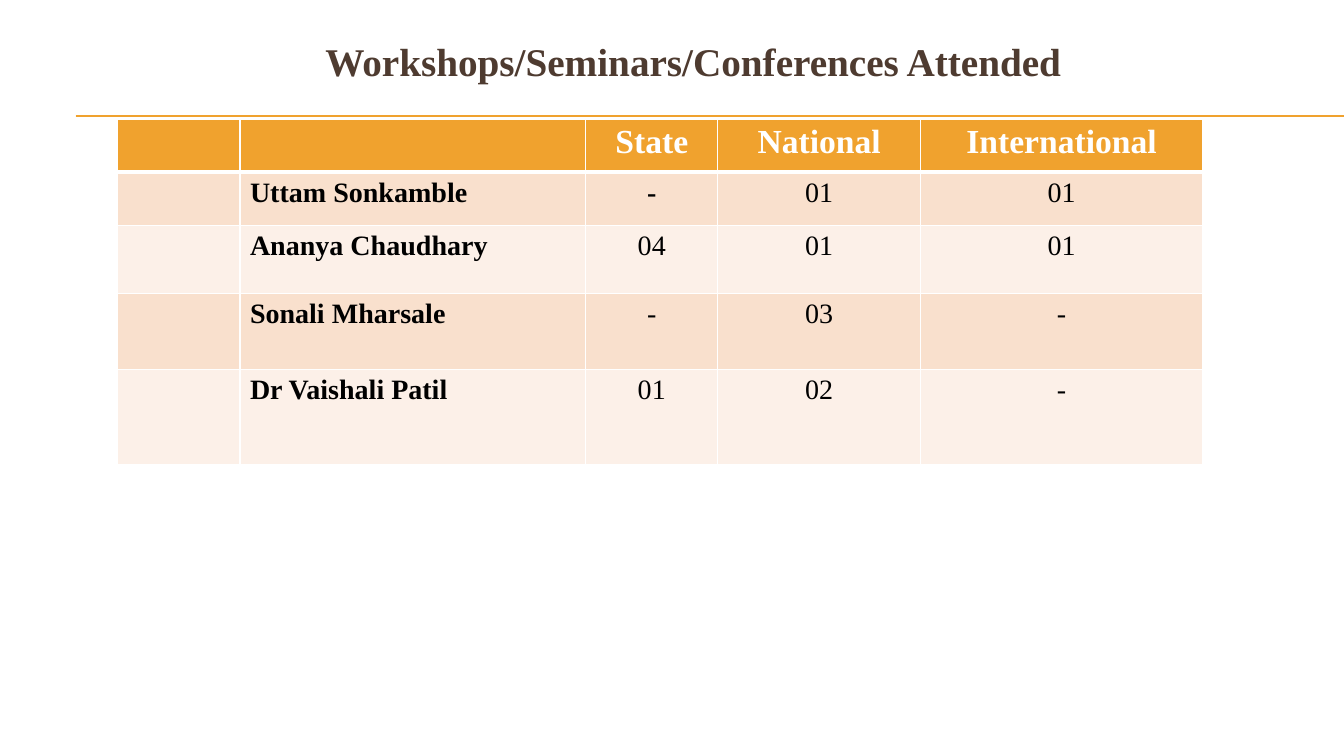
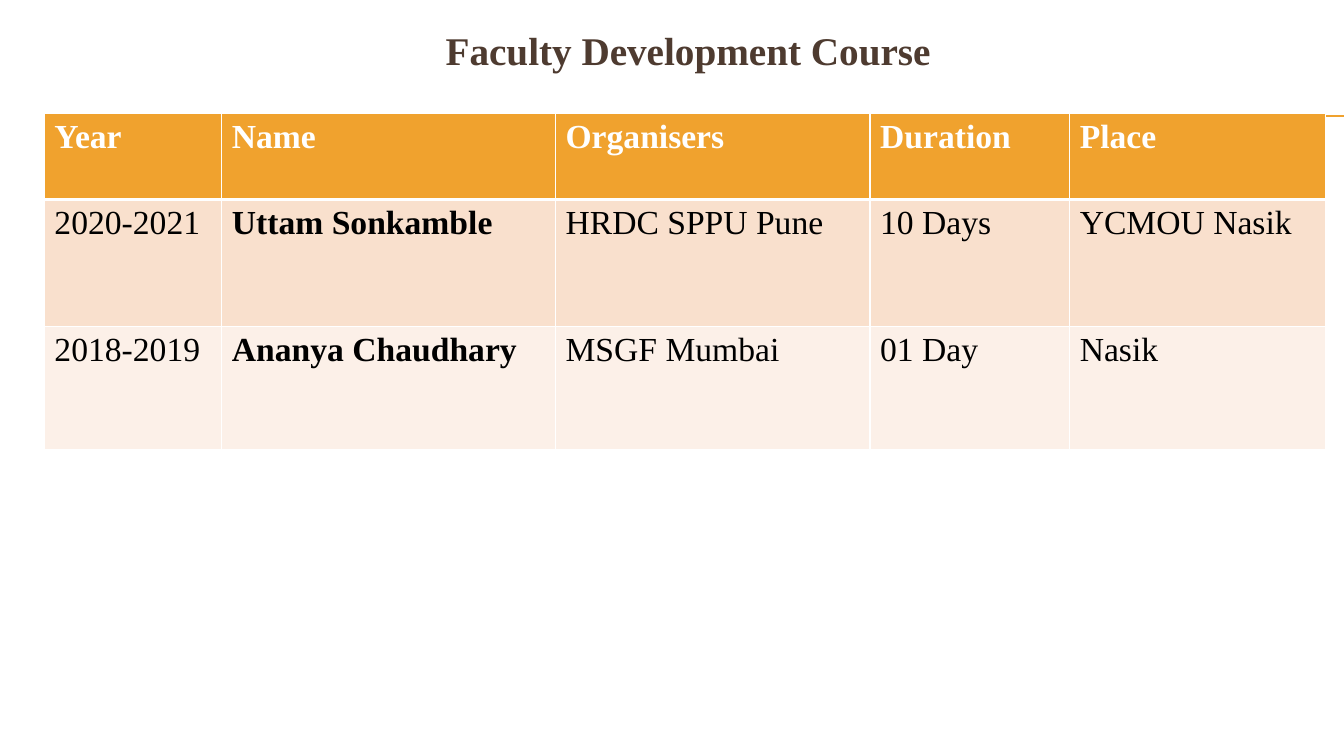
"""Build two slides listing faculty workshops and development courses."""
from lxml import etree
from pptx import Presentation
from pptx.dml.color import RGBColor
from pptx.enum.shapes import MSO_CONNECTOR
from pptx.enum.text import MSO_ANCHOR, PP_ALIGN
from pptx.oxml.ns import qn
from pptx.util import Inches, Pt

CENTER, LEFT = PP_ALIGN.CENTER, PP_ALIGN.LEFT
MIDDLE = MSO_ANCHOR.MIDDLE
STRAIGHT = MSO_CONNECTOR.STRAIGHT

ORANGE = RGBColor(0xF0, 0xA2, 0x2E)
BROWN = RGBColor(0x4E, 0x3B, 0x30)
WHITE = RGBColor(0xFF, 0xFF, 0xFF)
BLACK = RGBColor(0x00, 0x00, 0x00)
BANDS = (RGBColor(0xF9, 0xE0, 0xCD), RGBColor(0xFC, 0xF0, 0xE8))
FONT = "Times New Roman"
SLIDE_WIDTH, SLIDE_HEIGHT = 13.33, 7.5
RULE_LEFT, RULE_TOPS = 0.75, (1.15, 1.16)
TITLE_SIZE, HEADER_SIZE = 28, 24
NAME_COLUMN = 1

SLIDES = [
    {
        "title": "Workshops/Seminars/Conferences Attended",
        "title_box": (0.54, 0.24, 12.67, 0.73),
        "table_at": (1.16, 1.18),
        "columns": (1.22, 3.43, 1.31, 2.01, 2.8),
        "heights": (0.53, 0.53, 0.67, 0.76, 0.94),
        "alignments": (LEFT, LEFT, CENTER, CENTER, CENTER),
        "body_size": 20,
        "extra_bold": {(1, 2)},
        "rows": [
            ("", "", "State", "National", "International"),
            ("", "Uttam Sonkamble", "-", "01", "01"),
            ("", "Ananya Chaudhary", "04", "01", "01"),
            ("", "Sonali Mharsale", "-", "03", "-"),
            ("", "Dr Vaishali Patil", "01", "02", "-"),
        ],
    },
    {
        "title": "Faculty Development Course",
        "title_box": (0.49, 0.1, 12.67, 0.78),
        "table_at": (0.44, 1.13),
        "columns": (1.76, 3.31, 3.12, 1.98, 2.54),
        "heights": (0.85, 1.26, 1.22),
        "alignments": (LEFT,) * 5,
        "body_size": 24,
        "extra_bold": set(),
        "rows": [
            ("Year", "Name", "Organisers", "Duration", "Place"),
            ("2020-2021", "Uttam Sonkamble", "HRDC SPPU Pune", "10 Days", "YCMOU Nasik"),
            ("2018-2019", "Ananya Chaudhary", "MSGF Mumbai", "01 Day", "Nasik"),
        ],
    },
]


def write(frame, text, size, color, bold, alignment):
    paragraph = frame.paragraphs[0]
    paragraph.alignment = alignment
    run = paragraph.add_run()
    run.text = text
    run.font.name = FONT
    run.font.size = Pt(size)
    run.font.bold = bold
    run.font.color.rgb = color


def add_rules(slide):
    for top in RULE_TOPS:
        rule = slide.shapes.add_connector(
            STRAIGHT, Inches(RULE_LEFT), Inches(top), Inches(SLIDE_WIDTH), Inches(top))
        rule.line.color.rgb = ORANGE
        rule.line.width = Pt(0.75)
        etree.SubElement(rule._element.spPr, qn("a:effectLst"))


def add_title(slide, text, box):
    frame = slide.shapes.add_textbox(*map(Inches, box)).text_frame
    frame.word_wrap = True
    frame.vertical_anchor = MIDDLE
    write(frame, text, TITLE_SIZE, BROWN, True, CENTER)


def set_borders(cell, row):
    widths = {"L": 1, "R": 1, "T": 3 if row == 1 else 1, "B": 3 if row == 0 else 1}
    properties = cell._tc.get_or_add_tcPr()
    for side, width in widths.items():
        line = etree.SubElement(properties, qn(f"a:ln{side}"), w=str(Pt(width)))
        fill = etree.SubElement(line, qn("a:solidFill"))
        etree.SubElement(fill, qn("a:srgbClr"), val=str(WHITE))


def add_grid(slide, content):
    rows, columns, heights = content["rows"], content["columns"], content["heights"]
    box = (*content["table_at"], sum(columns), sum(heights))
    table = slide.shapes.add_table(len(rows), len(columns), *map(Inches, box)).table
    for column, width in zip(table.columns, columns):
        column.width = Inches(width)
    for row, height in zip(table.rows, heights):
        row.height = Inches(height)
    for r, values in enumerate(rows):
        header = r == 0
        size = HEADER_SIZE if header else content["body_size"]
        for c, text in enumerate(values):
            cell = table.cell(r, c)
            set_borders(cell, r)
            cell.fill.solid()
            cell.fill.fore_color.rgb = ORANGE if header else BANDS[(r - 1) % 2]
            bold = header or c == NAME_COLUMN or (r, c) in content["extra_bold"]
            if text:
                write(cell.text_frame, text, size, WHITE if header else BLACK,
                      bold, content["alignments"][c])


def main():
    presentation = Presentation()
    presentation.slide_width = Inches(SLIDE_WIDTH)
    presentation.slide_height = Inches(SLIDE_HEIGHT)
    for content in SLIDES:
        slide = presentation.slides.add_slide(presentation.slide_layouts[6])
        add_rules(slide)
        add_title(slide, content["title"], content["title_box"])
        add_grid(slide, content)
    presentation.save("out.pptx")


if __name__ == "__main__":
    main()
